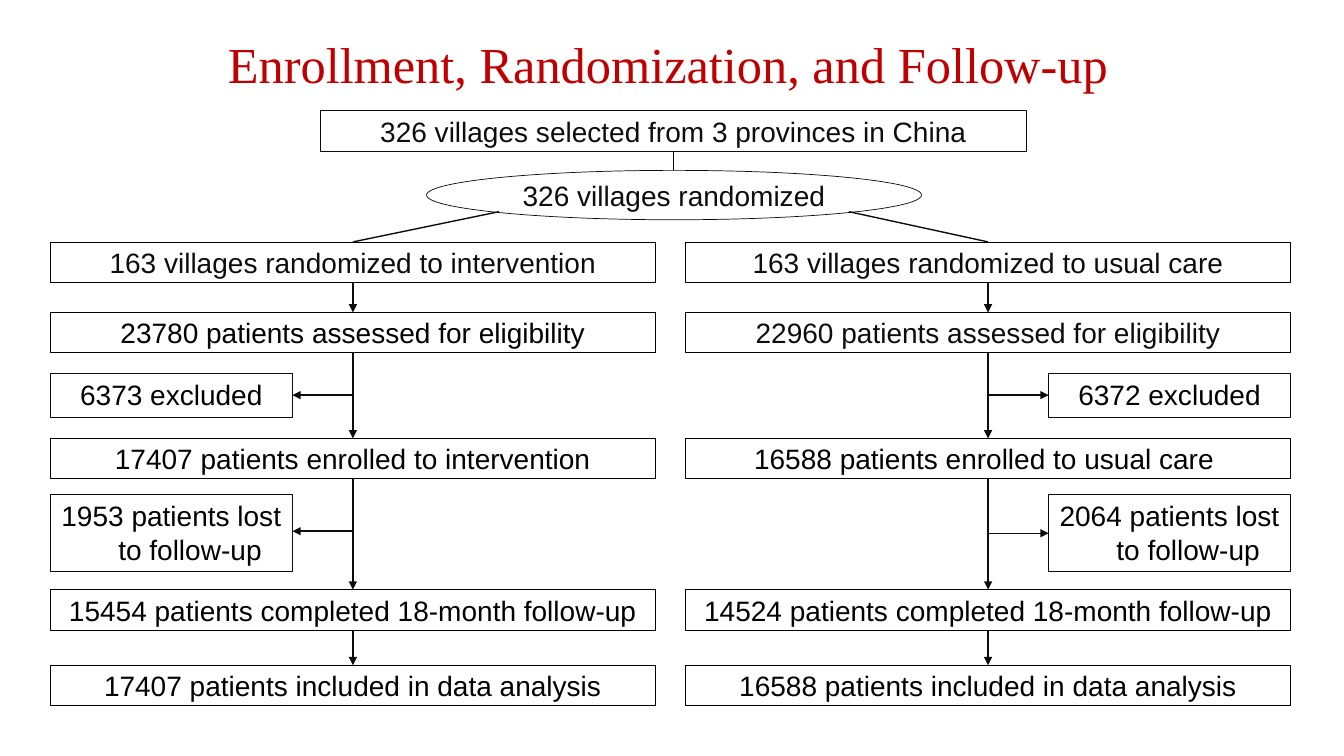
from dataclasses import dataclass

from lxml import etree
from pptx import Presentation
from pptx import util as u
from pptx.dml.color import RGBColor
from pptx.enum import shapes, text
from pptx.oxml.ns import qn

TITLE = "Enrollment, Randomization, and Follow-up"
SELECTED = "326 villages selected from 3 provinces in China"
RANDOMIZED = "326 villages randomized"
# soft_steps: how many leading steps use the softer ink for their words
ARMS = [
    {
        "steps": [
            "163 villages randomized to intervention",
            "23780 patients assessed for eligibility",
            "17407 patients enrolled to intervention",
            "15454 patients completed 18-month follow-up",
            "17407 patients included in data analysis",
        ],
        "soft_steps": 1,
        "losses": ["6373 excluded", "1953 patients lost to follow-up"],
        "loss_arrows": [3.92, 5.27],
    },
    {
        "steps": [
            "163 villages randomized to usual care",
            "22960 patients assessed for eligibility",
            "16588 patients enrolled to usual care ",
            "14524 patients completed 18-month follow-up",
            "16588 patients included in data analysis",
        ],
        "soft_steps": 2,
        "losses": ["6372 excluded", "2064 patients lost to follow-up"],
        "loss_arrows": [3.92, 5.29],
    },
]


@dataclass(frozen=True)
class Theme:
    title_font: str = "Times New Roman"
    body_font: str = "Arial"
    title_size: float = 36
    body_size: float = 20
    title: RGBColor = RGBColor(0xC0, 0x00, 0x00)
    soft: RGBColor = RGBColor(0x0D, 0x0D, 0x0D)
    black: RGBColor = RGBColor(0x00, 0x00, 0x00)
    paper: RGBColor = RGBColor(0xFF, 0xFF, 0xFF)
    box_line: float = 0.5
    arrow_line: float = 1


T = Theme()

# Grid, in inches
SLIDE_W, SLIDE_H = 13.33, 7.5
TITLE_AT = (2.16, 0.28, 9.02, 0.71)
ARM_LEFT, ARM_W, ARM_PITCH = 0.5, 6, 6.3
STEP_TOPS, STEP_H = [2.4, 3.1, 4.35, 5.85, 6.6], 0.4
LOSS_W, LOSS_ROWS = 2.4, [(3.7, 0.44), (4.9, 0.77)]
HANG = 0.37
SELECTED_AT = (3.18, 1.1, 7, STEP_H)
RANDOMIZED_AT = (4.23, 1.69, 4.91, 0.49)
FORK = [(4.95, 2.1), (8.42, 2.1)]


def add_box(slide, words, at, ink=T.soft, line=T.soft, inset=0.05):
    sp = slide.shapes.add_shape(shapes.MSO_SHAPE.RECTANGLE, *map(u.Inches, at))
    sp.shadow.inherit = False
    sp.fill.background()
    sp.line.color.rgb = line
    sp.line.width = u.Pt(T.box_line)
    tf = sp.text_frame
    tf.word_wrap = True
    tf.vertical_anchor = text.MSO_ANCHOR.MIDDLE
    tf.margin_left = tf.margin_right = u.Inches(inset)
    p = tf.paragraphs[0]
    p.text = words
    p.alignment = text.PP_ALIGN.CENTER
    p.font.name, p.font.size = T.body_font, u.Pt(T.body_size)
    p.font.color.rgb = ink
    return sp


def add_loss(slide, words, at):
    """A side box with a hanging indent and its words at the top."""
    sp = add_box(slide, words, at, ink=T.black, inset=0.1)
    sp.text_frame.vertical_anchor = text.MSO_ANCHOR.TOP
    pPr = sp.text_frame.paragraphs[0]._p.get_or_add_pPr()
    pPr.set("marL", str(u.Inches(HANG)))
    pPr.set("indent", str(-u.Inches(HANG)))


def add_link(slide, start, end, arrow=True):
    c = slide.shapes.add_connector(
        shapes.MSO_CONNECTOR.STRAIGHT, *map(u.Inches, (*start, *end))
    )
    c.line.color.rgb = T.soft
    c.line.width = u.Pt(T.arrow_line)
    spPr = c._element.spPr
    if arrow:
        etree.SubElement(spPr.find(qn("a:ln")), qn("a:tailEnd"), type="triangle")
    etree.SubElement(spPr, qn("a:effectLst"))


def add_title(slide):
    sp = slide.shapes.title
    sp.left, sp.top, sp.width, sp.height = map(u.Inches, TITLE_AT)
    tf = sp.text_frame
    tf.word_wrap = True
    tf.auto_size = text.MSO_AUTO_SIZE.NONE
    tf.vertical_anchor = text.MSO_ANCHOR.TOP
    p = tf.paragraphs[0]
    p.text = TITLE
    p.alignment = text.PP_ALIGN.LEFT
    p.font.name, p.font.size = T.title_font, u.Pt(T.title_size)
    p.font.color.rgb = T.title


def add_randomized(slide):
    sp = add_box(slide, RANDOMIZED, RANDOMIZED_AT)
    sp._element.spPr.find(qn("a:prstGeom")).set("prst", "ellipse")
    sp.fill.solid()
    sp.fill.fore_color.rgb = T.paper


def add_arm(slide, index, arm):
    left = ARM_LEFT + index * ARM_PITCH
    spine = left + ARM_W / 2
    loss_left = left + index * (ARM_W - LOSS_W)
    loss_edge = loss_left if index else loss_left + LOSS_W

    add_link(slide, FORK[index], (spine, STEP_TOPS[0]), arrow=False)
    for n, (words, top) in enumerate(zip(arm["steps"], STEP_TOPS)):
        ink = T.soft if n < arm["soft_steps"] else T.black
        add_box(slide, words, (left, top, ARM_W, STEP_H), ink, T.black)
    for top, below in zip(STEP_TOPS, STEP_TOPS[1:]):
        add_link(slide, (spine, top + STEP_H), (spine, below))
    for words, (top, height), y in zip(arm["losses"], LOSS_ROWS, arm["loss_arrows"]):
        add_loss(slide, words, (loss_left, top, LOSS_W, height))
        add_link(slide, (spine, y), (loss_edge, y))


def main():
    prs = Presentation()
    prs.slide_width, prs.slide_height = u.Inches(SLIDE_W), u.Inches(SLIDE_H)
    slide = prs.slides.add_slide(prs.slide_layouts[5])
    add_title(slide)
    add_box(slide, SELECTED, SELECTED_AT)
    add_randomized(slide)
    stem = SELECTED_AT[0] + SELECTED_AT[2] / 2
    add_link(slide, (stem, SELECTED_AT[1] + STEP_H), (stem, RANDOMIZED_AT[1]), arrow=False)
    for index, arm in enumerate(ARMS):
        add_arm(slide, index, arm)
    prs.save("out.pptx")


if __name__ == "__main__":
    main()
